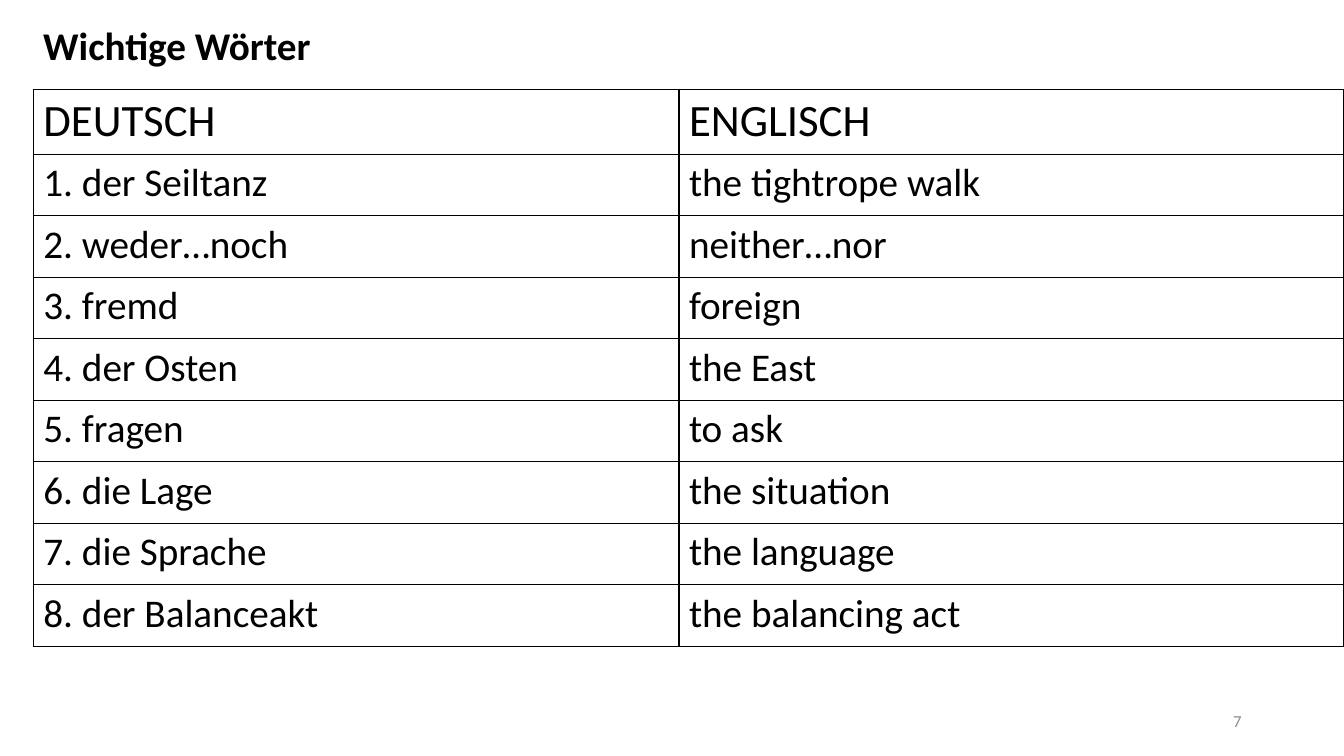
import pptx
import pptx.util
import pptx.dml.color
import pptx.enum.text
import pptx.oxml
import pptx.oxml.ns
from lxml import etree

Cm = pptx.util.Cm
Pt = pptx.util.Pt
BLACK = pptx.dml.color.RGBColor(0x00, 0x00, 0x00)
GREY = pptx.dml.color.RGBColor(0x8C, 0x8C, 0x8C)

WORDS = [
    ("DEUTSCH", "ENGLISCH"),
    ("1. der Seiltanz", "the tightrope walk"),
    ("2. weder…noch", "neither…nor"),
    ("3. fremd", "foreign"),
    ("4. der Osten", "the East"),
    ("5. fragen", "to ask"),
    ("6. die Lage", "the situation"),
    ("7. die Sprache", "the language"),
    ("8. der Balanceakt", "the balancing act"),
]


def add_span(para, text, size, color=BLACK, bold=False):
    span = para.add_run()
    span.text = text
    span.font.name = "Calibri"
    span.font.size = Pt(size)
    span.font.bold = bold
    span.font.color.rgb = color


def add_borders(cell):
    """Draw a thin black line on all four sides of the cell."""
    properties = cell._tc.get_or_add_tcPr()
    for position, side in enumerate(("lnL", "lnR", "lnT", "lnB")):
        line = etree.Element(pptx.oxml.ns.qn("a:" + side), w=str(Pt(1)))
        fill = etree.SubElement(line, pptx.oxml.ns.qn("a:solidFill"))
        etree.SubElement(fill, pptx.oxml.ns.qn("a:srgbClr"), val=str(BLACK))
        properties.insert(position, line)


deck = pptx.Presentation()
deck.slide_width = Cm(33.87)
deck.slide_height = Cm(19.05)
page = deck.slides.add_slide(deck.slide_layouts[6])

# Vocabulary table
frame = page.shapes.add_table(len(WORDS), 2, Cm(0.84), Cm(2.25), Cm(33.03), Cm(14.02))
table = frame.table
table.first_row = False
table.horz_banding = False
table.columns[0].width = Cm(16.27)
table.columns[1].width = Cm(16.76)
for row_number, pair in enumerate(WORDS):
    table.rows[row_number].height = Cm(1.55)
    for column_number, word in enumerate(pair):
        cell = table.cell(row_number, column_number)
        cell.fill.background()
        add_borders(cell)
        add_span(cell.text_frame.paragraphs[0], word, 32 if row_number == 0 else 28)

# Heading
heading = page.shapes.add_textbox(Cm(0.84), Cm(0.41), Cm(16.31), Cm(1.45))
heading.text_frame.word_wrap = True
heading.text_frame.auto_size = pptx.enum.text.MSO_AUTO_SIZE.SHAPE_TO_FIT_TEXT
add_span(heading.text_frame.paragraphs[0], "Wichtige Wörter", 28, bold=True)

# Page number
number_box = page.shapes.add_textbox(Cm(23.92), Cm(17.66), Cm(7.62), Cm(1.01))
number_box.text_frame.word_wrap = True
number_box.text_frame.vertical_anchor = pptx.enum.text.MSO_ANCHOR.MIDDLE
number_para = number_box.text_frame.paragraphs[0]
number_para.alignment = pptx.enum.text.PP_ALIGN.RIGHT
add_span(number_para, "7", 12, GREY)

deck.save("out.pptx")
